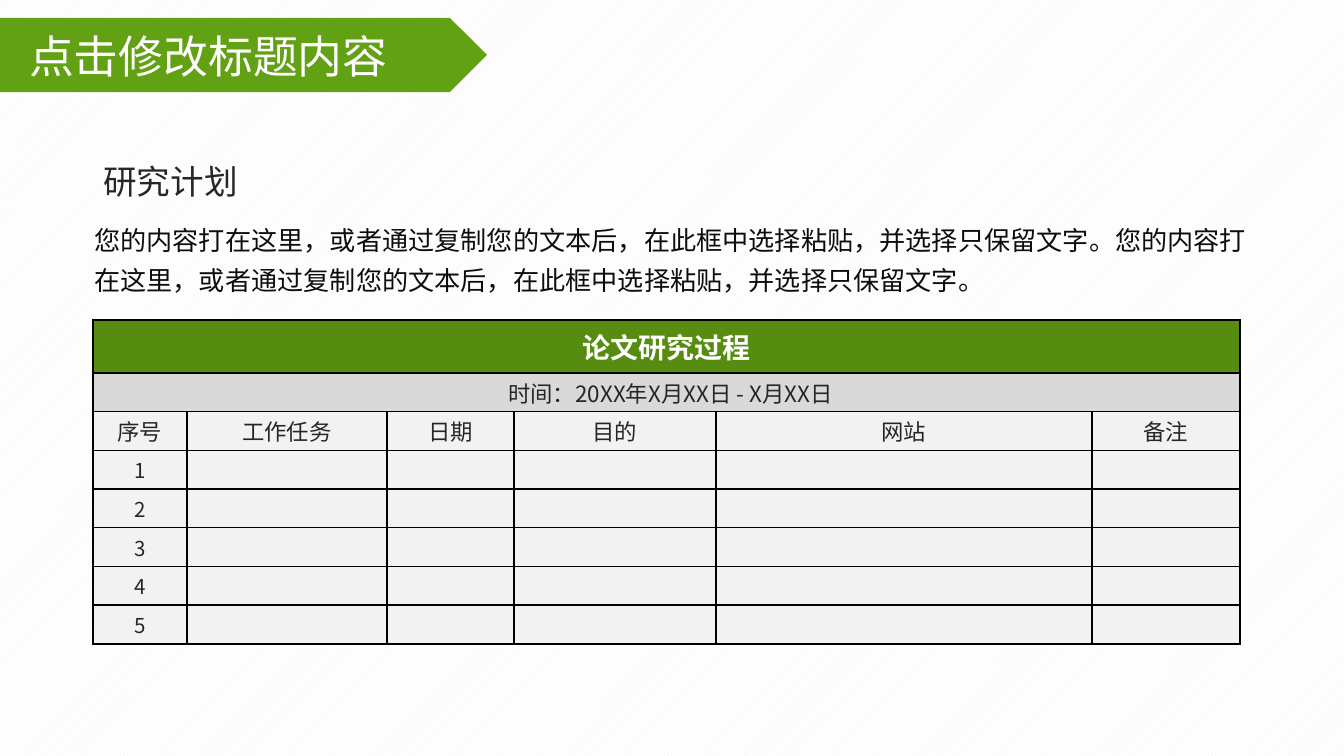
from lxml import etree
from pptx import Presentation
from pptx.dml.color import RGBColor
from pptx.enum.dml import MSO_PATTERN
from pptx.enum.shapes import MSO_SHAPE
from pptx.enum.text import MSO_ANCHOR, MSO_AUTO_SIZE, PP_ALIGN
from pptx.oxml.ns import qn
from pptx.util import Pt

EMU_PER_PX = 914400 / 134.4
FONT = "Noto Sans CJK SC"

WHITE = RGBColor(0xFF, 0xFF, 0xFF)
BLACK = RGBColor(0x00, 0x00, 0x00)
BANNER_GREEN = RGBColor(0x61, 0xA1, 0x13)
HEADER_GREEN = RGBColor(0x56, 0x8D, 0x11)
GRAY = RGBColor(0xD9, 0xD9, 0xD9)
LIGHT_GRAY = RGBColor(0xF2, 0xF2, 0xF2)
DARK = RGBColor(0x26, 0x26, 0x26)
BODY = RGBColor(0x0D, 0x0D, 0x0D)

PENTAGON = MSO_SHAPE.PENTAGON
UPWARD_DIAGONAL = MSO_PATTERN.LIGHT_UPWARD_DIAGONAL
MIDDLE = MSO_ANCHOR.MIDDLE
CENTER = PP_ALIGN.CENTER
FIT_SHAPE = MSO_AUTO_SIZE.SHAPE_TO_FIT_TEXT

INTRO = "您的内容打在这里，或者通过复制您的文本后，在此框中选择粘贴，并选择只保留文字。"
TABLE_TITLE = "论文研究过程"
PERIOD = "时间：20XX年X月XX日 - X月XX日"
COLUMNS = [("序号", 94), ("工作任务", 200), ("日期", 127),
           ("目的", 202), ("网站", 376), ("备注", 148)]
TASK_COUNT = 5
TITLE_HEIGHT = 53
ROWS_HEIGHT = 271


def px(value):
    return round(value * EMU_PER_PX)


def style_paragraph(paragraph, size, color, bold=False):
    font = paragraph.font
    font.size = Pt(size)
    font.bold = bold
    font.color.rgb = color
    font.name = FONT
    latin = font._element.find(qn("a:latin"))
    east_asian = etree.Element(qn("a:ea"), typeface=FONT)
    latin.addnext(east_asian)


def set_background(slide):
    fill = slide.background.fill
    fill.patterned()
    fill.pattern = UPWARD_DIAGONAL
    fill.fore_color.rgb = LIGHT_GRAY
    fill.back_color.rgb = WHITE


def add_text(slide, box, text, size, color, wrap=True, line_spacing=None):
    shape = slide.shapes.add_textbox(*map(px, box))
    frame = shape.text_frame
    frame.word_wrap = wrap
    frame.auto_size = FIT_SHAPE
    frame.text = text
    paragraph = frame.paragraphs[0]
    paragraph.line_spacing = line_spacing
    style_paragraph(paragraph, size, color)


def add_banner(slide, box):
    shape = slide.shapes.add_shape(PENTAGON, *map(px, box))
    shape.shadow.inherit = False
    shape.fill.solid()
    shape.fill.fore_color.rgb = BANNER_GREEN
    shape.line.fill.background()


def add_borders(cell):
    properties = cell._tc.get_or_add_tcPr()
    for side in ("a:lnL", "a:lnR", "a:lnT", "a:lnB"):
        line = etree.SubElement(properties, qn(side), w=str(Pt(1)))
        fill = etree.SubElement(line, qn("a:solidFill"))
        etree.SubElement(fill, qn("a:srgbClr"), val=str(BLACK))


def fill_cell(cell, text, fill, size, color, bold):
    add_borders(cell)
    cell.fill.solid()
    cell.fill.fore_color.rgb = fill
    cell.vertical_anchor = MIDDLE
    cell.margin_left = cell.margin_right = px(1)
    cell.margin_top = cell.margin_bottom = 0
    cell.text_frame.text = text
    paragraph = cell.text_frame.paragraphs[0]
    paragraph.alignment = CENTER
    style_paragraph(paragraph, size, color, bold)
    if not text:
        # The end mark sets the height of an empty line.
        paragraph._p.get_or_add_endParaRPr().set("sz", str(size * 100))


def add_plan_table(slide, left, top):
    blanks = [""] * (len(COLUMNS) - 1)
    rows = [
        ([TABLE_TITLE] + blanks, HEADER_GREEN, 15, WHITE, True),
        ([PERIOD] + blanks, GRAY, 12, DARK, False),
        ([name for name, _ in COLUMNS], LIGHT_GRAY, 12, DARK, False),
    ]
    for number in range(1, TASK_COUNT + 1):
        rows.append(([str(number)] + blanks, LIGHT_GRAY, 11, DARK, False))

    width = sum(column_width for _, column_width in COLUMNS)
    table = slide.shapes.add_table(
        len(rows), len(COLUMNS), px(left), px(top),
        px(width), px(TITLE_HEIGHT + ROWS_HEIGHT)).table
    table.first_row = False
    table.horz_banding = False
    for column, (_, column_width) in zip(table.columns, COLUMNS):
        column.width = px(column_width)
    for row in table.rows:
        row.height = px(ROWS_HEIGHT / (len(rows) - 1))
    table.rows[0].height = px(TITLE_HEIGHT)

    for row, (texts, fill, size, color, bold) in zip(table.rows, rows):
        for cell, text in zip(row.cells, texts):
            fill_cell(cell, text, fill, size, color, bold)
    for index in (0, 1):
        table.cell(index, 0).merge(table.cell(index, len(COLUMNS) - 1))
    table.cell(1, 0).margin_left = px(9)


def main():
    presentation = Presentation()
    presentation.slide_width = px(1344)
    presentation.slide_height = px(756)
    slide = presentation.slides.add_slide(presentation.slide_layouts[6])
    set_background(slide)
    add_text(slide, (90, 154, 163, 54), "研究计划", 18, DARK, wrap=False)
    add_text(slide, (81, 208, 1181, 92), INTRO * 2, 14, BODY, line_spacing=1.3)
    add_plan_table(slide, 93, 320)
    add_banner(slide, (-37, 18, 524, 74))
    add_text(slide, (16, 22, 558, 68), "点击修改标题内容", 24, WHITE)
    presentation.save("out.pptx")


if __name__ == "__main__":
    main()
